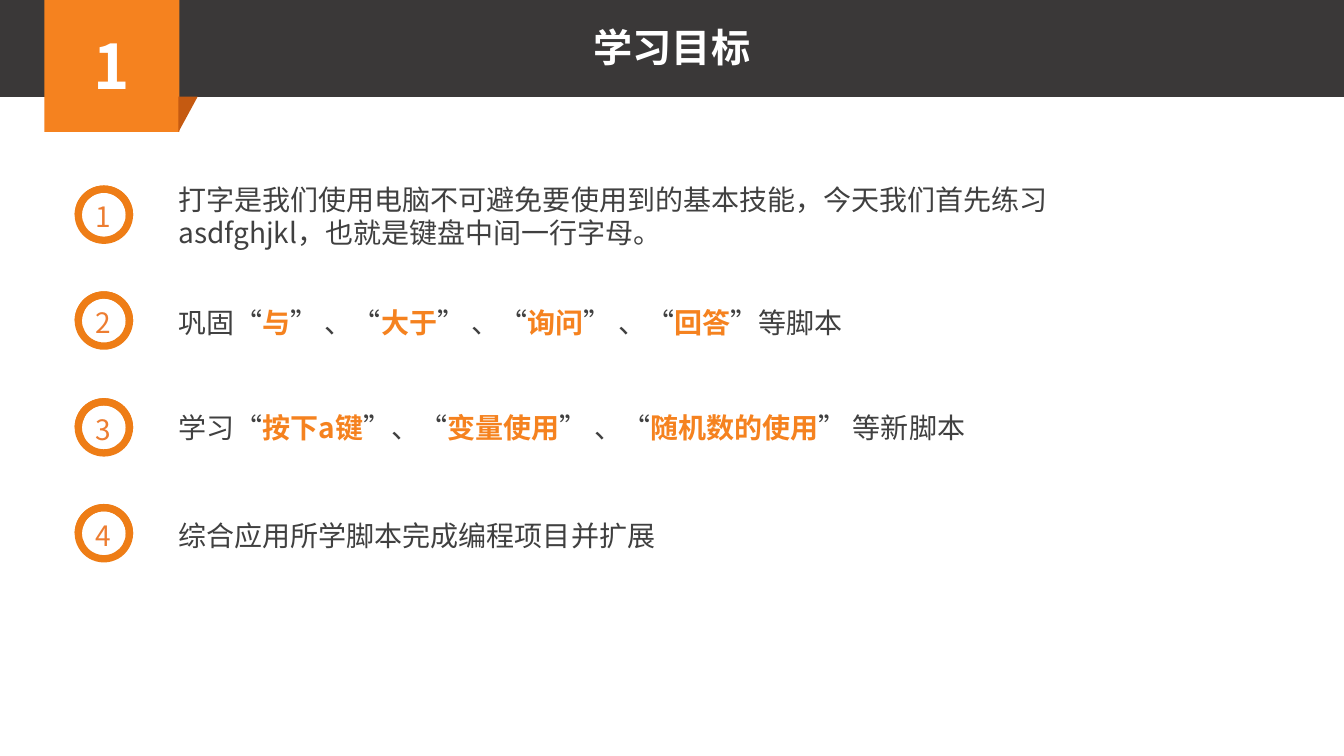
import pptx
import pptx.util
import pptx.dml.color
import pptx.enum.shapes
import pptx.enum.text
import pptx.oxml.ns
import lxml.etree

SCALE = 9144  # EMU in one px, 100 px to the inch
WIDE, HIGH = 1333, 750
FONT = "Noto Sans CJK SC"
SHAPE = pptx.enum.shapes.MSO_SHAPE
ALIGN = pptx.enum.text.PP_ALIGN
ANCHOR = pptx.enum.text.MSO_ANCHOR
FIT = pptx.enum.text.MSO_AUTO_SIZE.SHAPE_TO_FIT_TEXT

DARK, WHITE, GREY = "3A3838", "FFFFFF", "404040"
ORANGE, RUST, RING, DIGIT = "F5821F", "C55A11", "EE7D16", "ED7D31"

# Text top, text width, text height, then runs: every second run is a key word
GOALS = [
    (176, 928, 77, ["打字是我们使用电脑不可避免要使用到的基本技能，"
                    "今天我们首先练习asdfghjkl，也就是键盘中间一行字母。"]),
    (298, 965, 44, ["巩固“", "与", "” 、“", "大于", "” 、“", "询问",
                    "” 、“", "回答", "”等脚本"]),
    (402, 965, 44, ["学习“", "按下a键", "”、“", "变量使用", "” 、“",
                    "随机数的使用", "” 等新脚本"]),
    (509, 965, 44, ["综合应用所学脚本完成编程项目并扩展"]),
]


def px(*sizes):
    return [pptx.util.Emu(size * SCALE) for size in sizes]


def color(code):
    return pptx.dml.color.RGBColor.from_string(code)


def add_run(para, text, size, code, bold=False):
    run = para.add_run()
    run.text = text
    font = run.font
    font.size, font.bold, font.name = pptx.util.Pt(size), bold, FONT
    font.color.rgb = color(code)
    east = lxml.etree.SubElement(run._r.get_or_add_rPr(),
                                 pptx.oxml.ns.qn("a:ea"))
    east.set("typeface", FONT)


def add_block(shapes, kind, box, code):
    """Add a filled preset shape with no line or shadow."""
    block = shapes.add_shape(kind, *px(*box))
    block.shadow.inherit = False
    block.fill.solid()
    block.fill.fore_color.rgb = color(code)
    block.line.fill.background()
    return block


def add_label(shapes, box, wrap=True):
    """Add an empty text box and return its first paragraph."""
    frame = shapes.add_textbox(*px(*box)).text_frame
    frame.word_wrap, frame.auto_size = wrap, FIT
    return frame.paragraphs[0]


def add_header(slide, left, top, width, height):
    shapes = slide.shapes
    add_block(shapes, SHAPE.RECTANGLE, (left, top, width, height), DARK)
    side = 134
    tab = add_block(shapes, SHAPE.RECTANGLE, (left + 44, top, side, side), ORANGE)
    tab.text_frame.vertical_anchor = ANCHOR.MIDDLE
    para = tab.text_frame.paragraphs[0]
    para.alignment = ALIGN.CENTER
    add_run(para, "1", 44, WHITE, True)
    fold = add_block(shapes, SHAPE.RIGHT_TRIANGLE,
                     (left + 177, top + height, 19, side - height), RUST)
    fold.element.spPr.xfrm.set("flipV", "1")

    title = shapes.title
    title.left, title.top, title.width, title.height = px(
        left + 448, top + 21, 437, 57)
    frame = title.text_frame
    frame.word_wrap, frame.auto_size = True, FIT
    frame.vertical_anchor = ANCHOR.TOP
    para = frame.paragraphs[0]
    para.alignment = ALIGN.CENTER
    add_run(para, "学习目标", 28, WHITE, True)
    title.element.getparent().append(title.element)  # in front of the bar


def add_badge(slide, left, top, side, digit):
    """Add a ring with a digit inside, as one group."""
    shapes = slide.shapes.add_group_shape().shapes
    box = (left, top, side, side)
    ring = add_block(shapes, SHAPE.DONUT, box, RING)
    ring.adjustments[0] = 0.125
    arc = add_block(shapes, SHAPE.BLOCK_ARC, box, RING)
    for place, value in enumerate((107.95, 5.13, 0.125)):
        arc.adjustments[place] = value
    para = add_label(shapes, (left + 11, top + 9, 36, 44), False)
    add_run(para, digit, 20, DIGIT)


def add_goals(slide, left, top, pitch):
    for row, (text_top, width, height, runs) in enumerate(GOALS):
        add_badge(slide, left, top + round(row * pitch), 58, str(row + 1))
        para = add_label(slide.shapes, (left + 93, text_top, width, height))
        for place, text in enumerate(runs):
            key = place % 2 == 1
            add_run(para, text, 20, ORANGE if key else GREY, key)


def main():
    deck = pptx.Presentation()
    deck.slide_width, deck.slide_height = px(WIDE, HIGH)
    slide = deck.slides.add_slide(deck.slide_layouts.get_by_name("Title Only"))
    add_header(slide, 0, -3, WIDE, 99)
    add_goals(slide, 74, 184, 105.4)
    deck.save("out.pptx")


if __name__ == "__main__":
    main()
